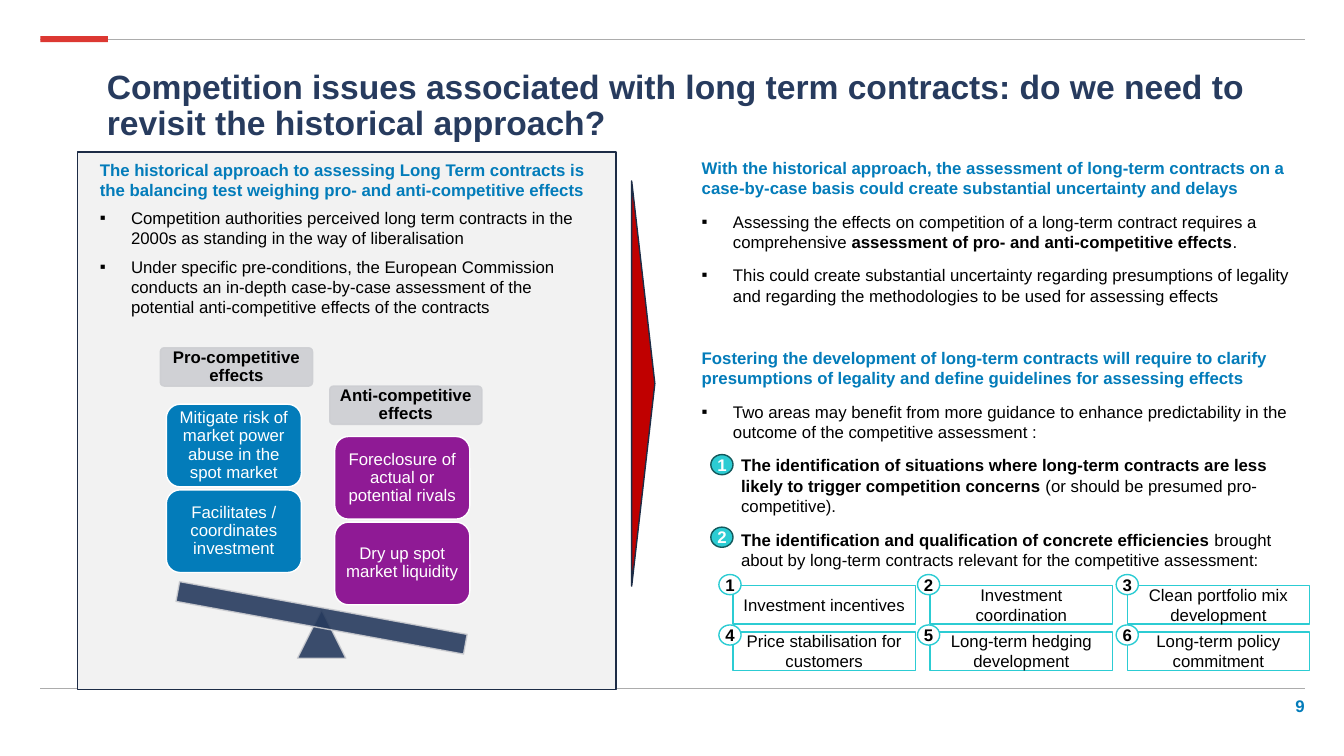
from dataclasses import dataclass
from itertools import product

from lxml.etree import SubElement
from pptx import Presentation
from pptx.dml.color import RGBColor
from pptx.enum.shapes import MSO_CONNECTOR, MSO_SHAPE
from pptx.enum.text import MSO_ANCHOR, MSO_AUTO_SIZE, PP_ALIGN
from pptx.oxml.ns import qn
from pptx.util import Inches, Pt


@dataclass(frozen=True)
class Theme:
    """Colours, font and type sizes of the slide."""
    font: str = "Arial"
    large: int = 24
    body: int = 12
    navy: str = "273B5E"
    edge: str = "1D2C46"
    blue: str = "037CBA"
    plum: str = "8F1A95"
    teal: str = "2CCCD3"
    pine: str = "13595C"
    red: str = "DC3832"
    dark: str = "C00000"
    rule: str = "ACACAC"
    grey: str = "CDCED2"
    pale: str = "F2F2F2"
    white: str = "FFFFFF"
    black: str = "000000"


class Board:
    """Draws on one slide, measured on a grid of 133.3 columns by 75 rows."""

    def __init__(self, deck, theme):
        """Add a title-only slide and work out the grid."""
        self.theme = theme
        self.slide = deck.slides.add_slide(deck.slide_layouts[5])
        self.shapes = self.slide.shapes
        self.col = deck.slide_width / 133.3
        self.row = deck.slide_height / 75

    def span(self, x, y, wide, high):
        """Turn grid units into slide lengths."""
        return (round(x * self.col), round(y * self.row),
                round(wide * self.col), round(high * self.row))

    def run(self, para, text, color, bold=False, size=None):
        """Add one styled run."""
        run = para.add_run()
        run.text = text
        run.font.name = self.theme.font
        run.font.size = Pt(size or self.theme.body)
        run.font.bold = bold
        run.font.color.rgb = RGBColor.from_string(color)

    def frame(self, shape, inset=(0, 0), wrap=True, anchor=MSO_ANCHOR.TOP):
        """Set the margins, wrap and anchor of a text frame."""
        frame = shape.text_frame
        frame.auto_size = MSO_AUTO_SIZE.NONE
        frame.word_wrap = wrap
        frame.vertical_anchor = anchor
        frame.margin_left = frame.margin_right = Inches(inset[0])
        frame.margin_top = frame.margin_bottom = Inches(inset[1])
        return frame

    def title(self, text, box):
        """Place and fill the title."""
        shape = self.shapes.title
        shape.left, shape.top, shape.width, shape.height = self.span(*box)
        para = self.frame(shape).paragraphs[0]
        para.alignment = PP_ALIGN.LEFT
        para.line_spacing = 0.9
        self.run(para, text, self.theme.navy, True, self.theme.large)

    def rule(self, x, y, wide):
        """Draw a thin level line."""
        left, top, width, _ = self.span(x, y, wide, 0)
        line = self.shapes.add_connector(
            MSO_CONNECTOR.STRAIGHT, left, top, left + width, top)
        line.line.color.rgb = RGBColor.from_string(self.theme.rule)
        line.line.width = Pt(0.5)
        SubElement(line._element.spPr, qn("a:effectLst"))

    def shape(self, kind, box, fill, edge=None, turn=0, round_by=None, clear=False):
        """Draw a filled preset shape."""
        shape = self.shapes.add_shape(kind, *self.span(*box))
        shape.shadow.inherit = False
        shape.rotation = turn
        shape.fill.solid()
        shape.fill.fore_color.rgb = RGBColor.from_string(fill)
        if edge:
            shape.line.color.rgb = RGBColor.from_string(edge)
            shape.line.width = Pt(1)
        else:
            shape.line.fill.background()
        if round_by:
            shape.adjustments[0] = round_by
        if clear:
            for tint in shape._element.spPr.iter(qn("a:srgbClr")):
                SubElement(tint, qn("a:alpha"), val="90000")
        return shape

    def label(self, shape, text, color, bold=False, inset=(0.1, 0.05), wrap=True, pitch=1.0):
        """Centre a label in a shape."""
        para = self.frame(shape, inset, wrap, MSO_ANCHOR.MIDDLE).paragraphs[0]
        para.alignment = PP_ALIGN.CENTER
        para.line_spacing = pitch
        self.run(para, text, color, bold)

    def badge(self, x, y, text, fill, edge, color):
        """Draw a numbered dot."""
        dot = self.shape(MSO_SHAPE.OVAL, (x, y, 2.2, 2), fill, edge)
        self.label(dot, text, color, True, (0, 0), False)

    def block(self, box, paras, inset=0, pitch=1.0, before=0):
        """Write headings, bullets and steps in a text box."""
        shape = self.shapes.add_textbox(*self.span(*box))
        frame = self.frame(shape, (inset, inset))
        for spot, (kind, *runs) in enumerate(paras):
            para = frame.paragraphs[0] if spot == 0 else frame.add_paragraph()
            para.line_spacing = pitch
            para.space_after = Pt(6)
            if spot:
                para.space_before = Pt(23.5 if kind == "head" else before)
            self.indent(para, kind)
            color = self.theme.blue if kind == "head" else self.theme.black
            for text, bold in runs:
                self.run(para, text, color, bold)

    def indent(self, para, kind):
        """Indent a step, or indent and mark a bullet."""
        props = para._p.get_or_add_pPr()
        if kind == "step":
            props.set("marL", str(Inches(0.39)))
        elif kind == "item":
            props.set("marL", str(Inches(0.31)))
            props.set("indent", str(-Inches(0.31)))
            SubElement(props, qn("a:buFont"), typeface=self.theme.font)
            SubElement(props, qn("a:buChar"), char="▪")

    def number(self, text, box):
        """Write the page number."""
        shape = self.shapes.add_textbox(*self.span(*box))
        para = self.frame(shape, anchor=MSO_ANCHOR.BOTTOM).paragraphs[0]
        para.alignment = PP_ALIGN.RIGHT
        self.run(para, text, self.theme.blue, True)


PAST = [
    ("head", ("The historical approach to assessing Long Term contracts is the balancing test weighing pro- and anti-competitive effects", True)),
    ("item", ("Competition authorities perceived long term contracts in the 2000s as standing in the way of liberalisation", False)),
    ("item", ("Under specific pre-conditions, the European Commission conducts an in-depth case-by-case assessment of the potential anti-competitive effects of the contracts", False)),
]
NEXT = [
    ("head", ("With the historical approach, the assessment of long-term contracts on a case-by-case basis could create substantial uncertainty and delays", True)),
    ("item", ("Assessing the effects on competition of a long-term contract requires a comprehensive ", False),
     ("assessment of pro- and anti-competitive effects", True), (".", False)),
    ("item", ("This could create substantial uncertainty regarding presumptions of legality and regarding the methodologies to be used for assessing effects", False)),
    ("head", ("Fostering the development of long-term contracts will require to clarify presumptions of legality and define guidelines for assessing effects", True)),
    ("item", ("Two areas may benefit from more guidance to enhance predictability in the outcome of the competitive assessment :", False)),
    ("step", ("The identification of situations where long-term contracts are less likely to trigger competition concerns ", True),
     ("(or should be presumed pro-competitive).", False)),
    ("step", ("The identification and qualification of concrete efficiencies ", True),
     ("brought about by long-term contracts relevant for the competitive assessment:", False)),
]
GAINS = ["Investment incentives", "Investment coordination", "Clean portfolio mix development",
         "Price stabilisation for customers", "Long-term hedging development", "Long-term policy commitment"]


def scale(board):
    """Draw the two stacks of effects on a tilted beam."""
    theme = board.theme
    for x, y, text in ((15.9, 34.5, "Pro-competitive effects"), (32.7, 38.3, "Anti-competitive effects")):
        tag = board.shape(MSO_SHAPE.ROUNDED_RECTANGLE, (x, y, 15.1, 3.8),
                          theme.grey, theme.grey, round_by=0.1, clear=True)
        board.label(tag, text, theme.black, True, (0.05, 0.05), pitch=0.9)
    board.shape(MSO_SHAPE.ISOSCELES_TRIANGLE, (29.5, 60.5, 4.8, 4.8), theme.navy, theme.grey, clear=True)
    board.shape(MSO_SHAPE.RECTANGLE, (17.4, 60.3, 29, 2), theme.navy, theme.grey, 10.4, clear=True)
    stacks = ((33.2, 43.3, theme.plum, ("Foreclosure of actual or potential rivals", "Dry up spot market liquidity")),
              (16.5, 40.1, theme.blue, ("Mitigate risk of market power abuse in the spot market", "Facilitates / coordinates investment")))
    for x, y, fill, texts in stacks:
        for step, text in enumerate(texts):
            brick = board.shape(MSO_SHAPE.ROUNDED_RECTANGLE, (x, y + 8.5 * step, 13.4, 8.2), fill, theme.white)
            board.label(brick, text, theme.white, inset=(0.05, 0.05), pitch=0.9)


def main():
    """Build and save the slide."""
    deck = Presentation()
    deck.slide_width, deck.slide_height = Inches(13.33), Inches(7.5)
    theme = Theme()
    board = Board(deck, theme)
    for y in (3.9, 68.3):
        board.rule(4, y, 125.4)
    board.shape(MSO_SHAPE.RECTANGLE, (4, 3.6, 6.7, 0.6), theme.red)
    board.shape(MSO_SHAPE.RECTANGLE, (7.7, 15.1, 53.4, 53.3), theme.pale, theme.edge)
    board.title("Competition issues associated with long term contracts: do we need to revisit the historical approach?",
                (10.6, 7, 118.8, 3.8))
    board.number("9", (124, 68.3, 5.4, 2.7))
    scale(board)
    board.block((8.7, 14.6, 51.7, 21.1), PAST, inset=0.12)
    board.shape(MSO_SHAPE.ISOSCELES_TRIANGLE, (43.7, 36.9, 40.2, 2.3), theme.dark, theme.edge, 90)
    board.block((69.6, 15.6, 59.2, 45.1), NEXT, pitch=1.02, before=3)
    for y, text in ((45.1, "1"), (52.3, "2")):
        board.badge(70.5, y, text, theme.teal, theme.pine, theme.white)
    for spot, (text, (row, col)) in enumerate(zip(GAINS, product(range(2), range(3))), 1):
        cell = board.shape(MSO_SHAPE.RECTANGLE, (72.7 + 19.55 * col, 58.1 + 4.6 * row, 18.1, 3.8),
                           theme.white, theme.teal)
        board.label(cell, text, theme.black)
        board.badge(71.3 + 19.7 * col, 57 + 5 * row, str(spot), theme.white, theme.teal, theme.black)
    deck.save("out.pptx")


if __name__ == "__main__":
    main()
